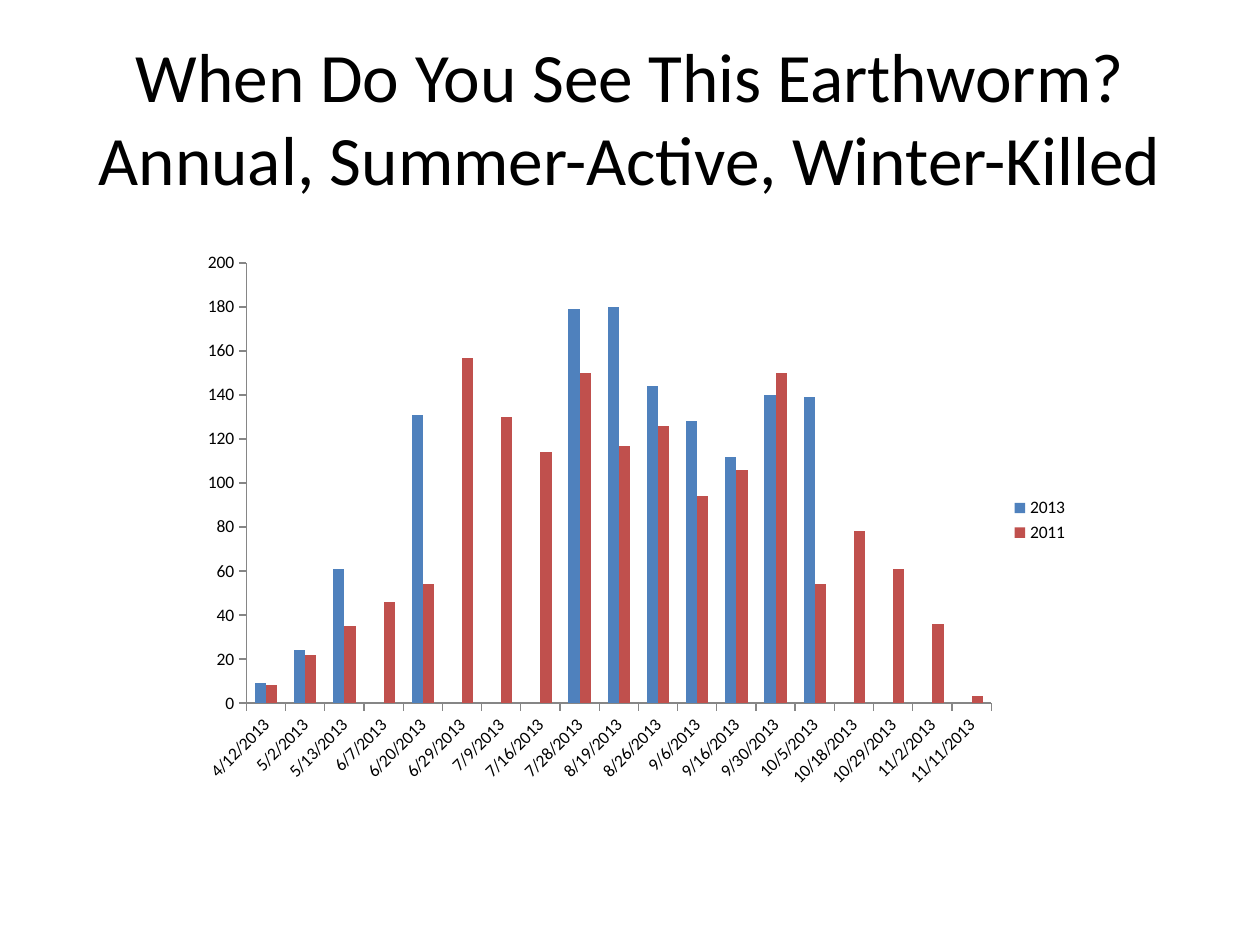
from dataclasses import dataclass

from pptx import Presentation
from pptx.chart.data import CategoryChartData
from pptx.dml.color import RGBColor
from pptx.enum.chart import XL_CHART_TYPE as ChartType
from pptx.enum.chart import XL_LEGEND_POSITION as LegendPosition
from pptx.enum.chart import XL_TICK_MARK as TickMark
from pptx.enum.text import MSO_ANCHOR as Anchor
from pptx.enum.text import MSO_AUTO_SIZE as AutoSize
from pptx.enum.text import PP_ALIGN as Align
from pptx.slide import Slide
from pptx.util import Inches, Pt

BLACK = RGBColor(0x00, 0x00, 0x00)
AXIS_GRAY = RGBColor(0x86, 0x86, 0x86)
BLUE = RGBColor(0x4F, 0x81, 0xBD)
RED = RGBColor(0xC0, 0x50, 0x4D)

DATES = [
    "4/12/2013", "5/2/2013", "5/13/2013", "6/7/2013", "6/20/2013",
    "6/29/2013", "7/9/2013", "7/16/2013", "7/28/2013", "8/19/2013",
    "8/26/2013", "9/6/2013", "9/16/2013", "9/30/2013", "10/5/2013",
    "10/18/2013", "10/29/2013", "11/2/2013", "11/11/2013",
]
COUNTS_2013 = [9, 24, 61, None, 131, None, None, None, 179, 180,
               144, 128, 112, 140, 139, None, None, None, None]
COUNTS_2011 = [8, 22, 35, 46, 54, 157, 130, 114, 150, 117,
               126, 94, 106, 150, 54, 78, 61, 36, 3]


@dataclass
class SlideBuilder:
    slide: Slide
    font_name: str = "Calibri"
    title_size: float = 39.6
    chart_size: float = 10

    def style_font(self, font, size):
        font.name = self.font_name
        font.size = Pt(size)
        font.color.rgb = BLACK

    def add_title(self, text, left, top, width, height):
        title = self.slide.shapes.title
        title.left, title.top = Inches(left), Inches(top)
        title.width, title.height = Inches(width), Inches(height)
        frame = title.text_frame
        frame.text = text
        frame.word_wrap = True
        frame.auto_size = AutoSize.NONE
        frame.vertical_anchor = Anchor.MIDDLE
        for paragraph in frame.paragraphs:
            paragraph.alignment = Align.CENTER
            for run in paragraph.runs:
                self.style_font(run.font, self.title_size)

    def style_axis(self, axis):
        axis.has_major_gridlines = False
        axis.major_tick_mark = TickMark.OUTSIDE
        axis.minor_tick_mark = TickMark.NONE
        axis.format.line.color.rgb = AXIS_GRAY
        axis.format.line.width = Pt(0.75)
        self.style_font(axis.tick_labels.font, self.chart_size)

    def add_column_chart(self, categories, series_list, left, top, width, height):
        """Draw clustered columns; each series is (name, values, color)."""
        data = CategoryChartData()
        data.categories = categories
        for name, values, _ in series_list:
            data.add_series(name, values)
        chart = self.slide.shapes.add_chart(
            ChartType.COLUMN_CLUSTERED, Inches(left), Inches(top),
            Inches(width), Inches(height), data).chart
        self.style_font(chart.font, self.chart_size)
        chart.has_title = False
        chart.has_legend = True
        chart.legend.position = LegendPosition.RIGHT
        chart.legend.include_in_layout = False
        self.style_font(chart.legend.font, self.chart_size)

        self.style_axis(chart.category_axis)
        self.style_axis(chart.value_axis)
        chart.value_axis.minimum_scale = 0
        chart.value_axis.maximum_scale = 200
        chart.value_axis.major_unit = 20
        # Slant the dates by 45 degrees, in 60000ths of a degree
        label_body = chart.category_axis._element.txPr.bodyPr
        label_body.set("rot", "-2700000")
        label_body.set("vert", "horz")

        plot = chart.plots[0]
        plot.gap_width = 150
        plot.overlap = 0
        plot.vary_by_categories = False
        for series, (_, _, color) in zip(plot.series, series_list):
            series.format.fill.solid()
            series.format.fill.fore_color.rgb = color


def main():
    presentation = Presentation()
    presentation.slide_width = Inches(10)
    presentation.slide_height = Inches(7.5)
    title_only = presentation.slide_layouts[5]
    builder = SlideBuilder(presentation.slides.add_slide(title_only))
    builder.add_title(
        "When Do You See This Earthworm?\vAnnual, Summer-Active, Winter-Killed",
        0.5, 0.3, 9, 1.25)
    builder.add_column_chart(
        DATES, [("2013", COUNTS_2013, BLUE), ("2011", COUNTS_2011, RED)],
        1.5, 1.92, 7.08, 4.42)
    presentation.save("out.pptx")


if __name__ == "__main__":
    main()
